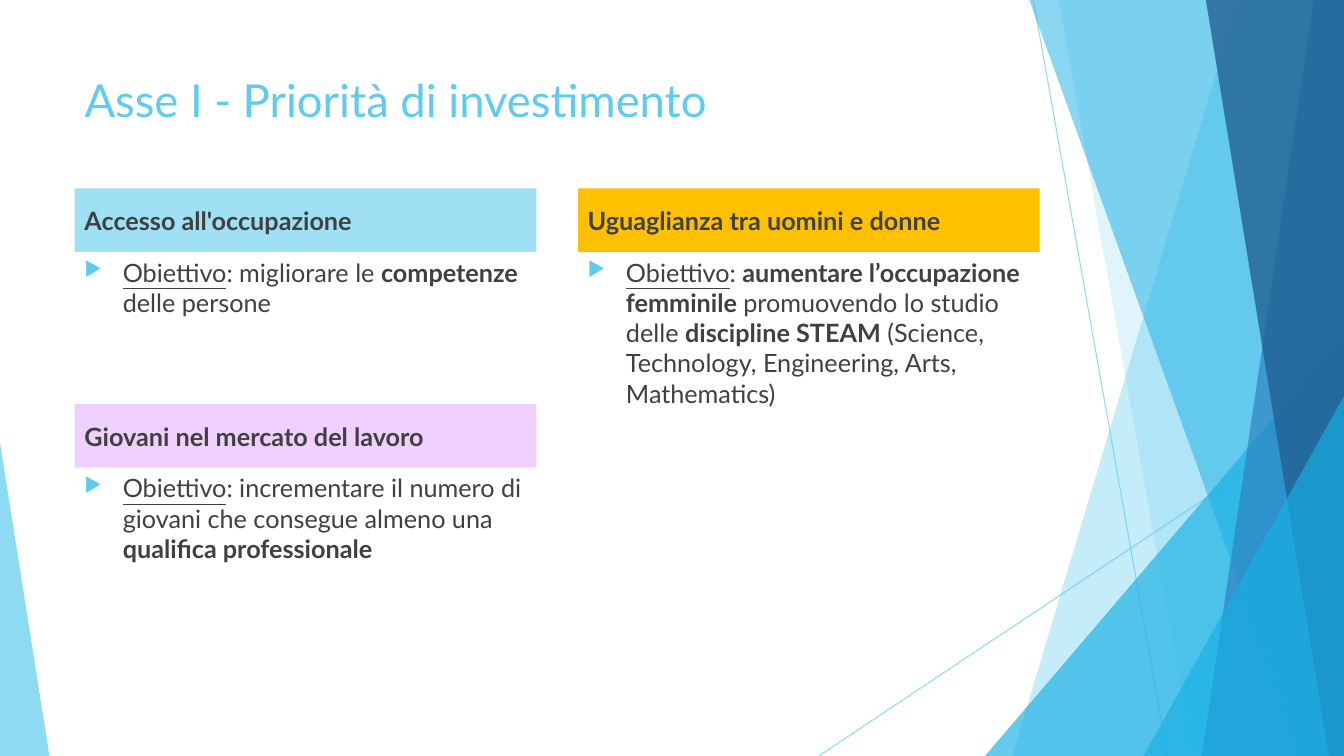
import lxml.etree
import pptx
import pptx.dml.color
import pptx.enum.shapes
import pptx.enum.text
import pptx.oxml.ns
import pptx.util

COLORS = {
    "sky": "5FCBEF",
    "cyan": "17B0E4",
    "blue": "2E83C3",
    "navy": "226292",
    "text": "404040",
    "access": "9FE0F5",
    "youth": "CC66FF",
    "equality": "FFC000",
}
FONT = "Lato"
WIDTH = pptx.util.Inches(13.33)
HEIGHT = pptx.util.Inches(7.5)
SHAPES = pptx.enum.shapes.MSO_SHAPE
ANCHORS = pptx.enum.text.MSO_ANCHOR

GUIDES = [(76.89, 0, 86.87, 100), (100, 53.73, 60.92, 100)]
DECORATION = [
    ("panel", (92.12, 75.32), "sky", 36),
    ("panel", (78.77, 88.75), "sky", 20),
    ("triangle", (73.29, 44.4, 26.71, 55.6, 1), "cyan", 66),
    ("panel", (76.59, 96.85), "cyan", 50),
    ("panel", (97.75, 89.42), "blue", 70),
    ("panel", (89.72, 98.87), "navy", 80),
    ("triangle", (85.07, 52.4, 14.93, 47.6, 1), "cyan", 66),
    ("triangle", (0, 58.53, 3.68, 41.47, 0), "sky", 70),
]
TITLE_BOX = (5.55, 8.93, 70.52, 19.2)
HEADER_HEIGHT = 8.4
CARDS = [
    ((5.55, 24.93, 34.36, 56.53), "Accesso all'occupazione", "access", 100, [
        (": migliorare le ", False),
        ("competenze", True),
        (" delle persone", False),
    ]),
    ((5.55, 53.47, 34.36, 25.73), "Giovani nel mercato del lavoro", "youth", 30, [
        (": incrementare il numero di giovani che consegue almeno una ", False),
        ("qualifica professionale", True),
    ]),
    ((42.99, 24.93, 34.36, 56.53), "Uguaglianza tra uomini e donne", "equality", 100, [
        (": ", False),
        ("aumentare l’occupazione femminile ", True),
        ("promuovendo lo studio delle ", False),
        ("discipline STEAM", True),
        (" (Science, Technology, Engineering, Arts, Mathematics)", False),
    ]),
]


def across(percent):
    return round(WIDTH * percent / 100)


def down(percent):
    return round(HEIGHT * percent / 100)


def place(box):
    left, top, width, height = box
    return across(left), down(top), across(width), down(height)


def rgb(name):
    return pptx.dml.color.RGBColor.from_string(COLORS[name])


def add_element(parent, tag, **values):
    element = lxml.etree.SubElement(parent, pptx.oxml.ns.qn(tag))
    for name, value in values.items():
        element.set(name, value)
    return element


def set_opacity(shape, percent):
    if percent < 100:
        for color in shape._element.spPr.iter(pptx.oxml.ns.qn("a:srgbClr")):
            add_element(color, "a:alpha", val=str(percent * 1000))


def paint(shape, color, opacity):
    shape.shadow.inherit = False
    shape.fill.solid()
    shape.fill.fore_color.rgb = rgb(color)
    shape.line.fill.background()
    set_opacity(shape, opacity)


def add_run(paragraph, text, color="text", **values):
    run = paragraph.add_run()
    run.text = text
    run.font.color.rgb = rgb(color)
    for name, value in {"name": FONT, "size": pptx.util.Pt(18), **values}.items():
        setattr(run.font, name, value)


def prepare_text(shape, anchor):
    frame = shape.text_frame
    frame.word_wrap = True
    frame.vertical_anchor = anchor
    paragraph = frame.paragraphs[0]
    paragraph.alignment = pptx.enum.text.PP_ALIGN.LEFT
    return paragraph


def add_bullet(paragraph):
    properties = paragraph._p.get_or_add_pPr()
    indent = pptx.util.Inches(0.38)
    properties.set("marL", str(indent))
    properties.set("indent", str(-indent))
    color = add_element(properties, "a:buClr")
    add_element(color, "a:srgbClr", val=COLORS["sky"])
    add_element(properties, "a:buSzPct", val="80000")
    add_element(properties, "a:buChar", char="▶")


def add_guide(slide, ends):
    x1, y1, x2, y2 = ends
    guide = slide.shapes.add_connector(
        pptx.enum.shapes.MSO_CONNECTOR.STRAIGHT,
        across(x1), down(y1), across(x2), down(y2))
    guide.line.color.rgb = rgb("sky")
    guide.line.width = pptx.util.Pt(0.75)
    set_opacity(guide, 70)
    add_element(guide._element.spPr, "a:effectLst")


def add_panel(slide, edge):
    top, bottom = edge
    builder = slide.shapes.build_freeform(across(top), 0)
    builder.add_line_segments(
        [(WIDTH, 0), (WIDTH, HEIGHT), (across(bottom), HEIGHT)], close=True)
    return builder.convert_to_shape()


def add_triangle(slide, geometry):
    *box, apex = geometry
    triangle = slide.shapes.add_shape(SHAPES.ISOSCELES_TRIANGLE, *place(box))
    triangle.adjustments[0] = apex
    return triangle


def add_decoration(slide):
    for ends in GUIDES:
        add_guide(slide, ends)
    builders = {"panel": add_panel, "triangle": add_triangle}
    for kind, geometry, color, opacity in DECORATION:
        paint(builders[kind](slide, geometry), color, opacity)


def add_title(slide, box):
    title = slide.shapes.add_textbox(*place(box))
    paragraph = prepare_text(title, ANCHORS.TOP)
    add_run(paragraph, "Asse I - Priorità di investimento", "sky", size=pptx.util.Pt(32.4))


def add_card(slide, box, heading, color, opacity, objective):
    left, top, width, height = box
    header = slide.shapes.add_shape(
        SHAPES.RECTANGLE, *place((left, top, width, HEADER_HEIGHT)))
    paint(header, color, opacity)
    add_run(prepare_text(header, ANCHORS.MIDDLE), heading, bold=True)

    body = slide.shapes.add_textbox(
        *place((left, top + HEADER_HEIGHT, width, height - HEADER_HEIGHT)))
    paragraph = prepare_text(body, ANCHORS.TOP)
    add_bullet(paragraph)
    add_run(paragraph, "Obiettivo", underline=True)
    for text, bold in objective:
        add_run(paragraph, text, bold=bold)


def main():
    presentation = pptx.Presentation()
    presentation.slide_width = WIDTH
    presentation.slide_height = HEIGHT
    slide = presentation.slides.add_slide(presentation.slide_layouts[6])
    add_decoration(slide)
    add_title(slide, TITLE_BOX)
    for card in CARDS:
        add_card(slide, *card)
    presentation.save("out.pptx")


if __name__ == "__main__":
    main()
